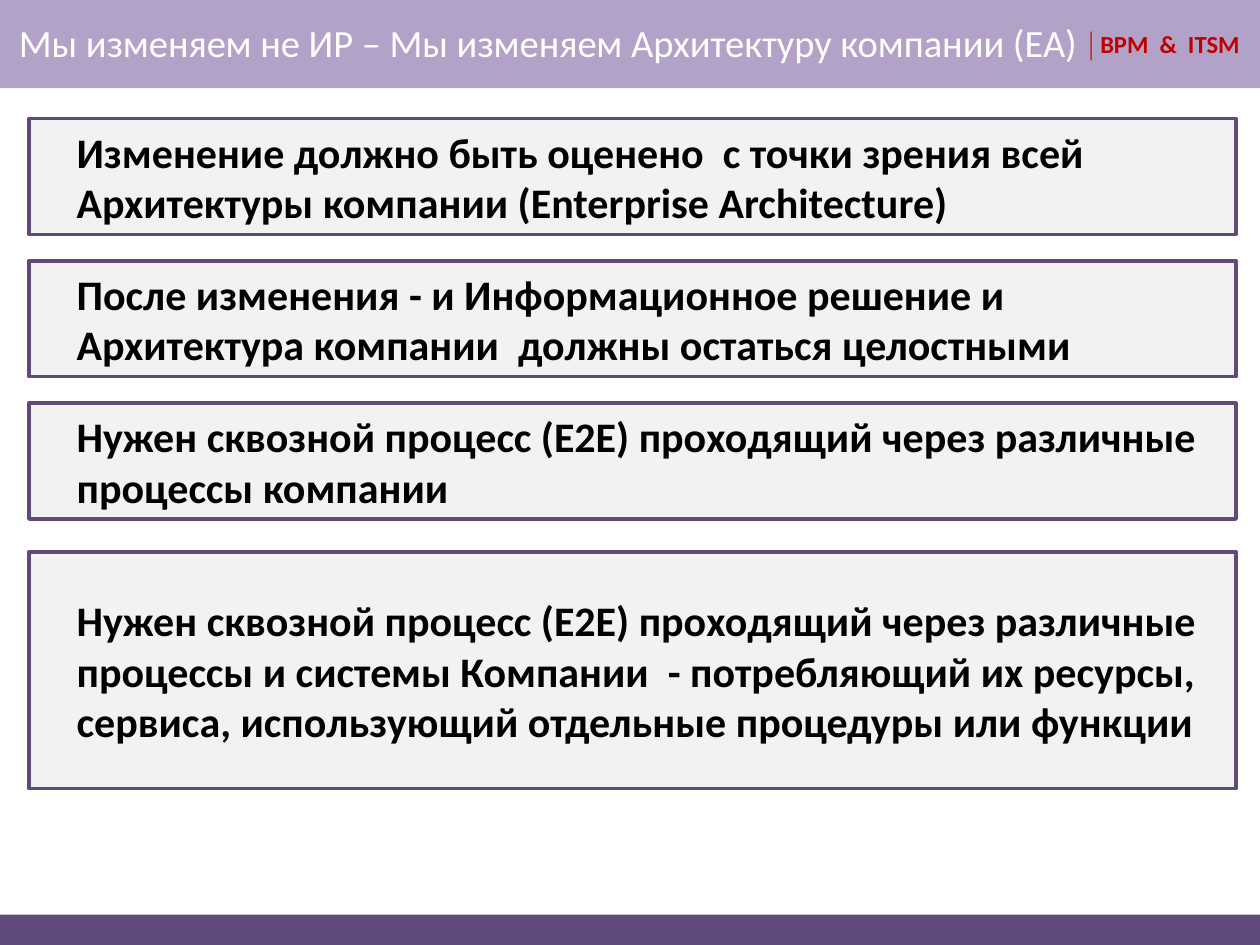
from lxml import etree
from pptx import Presentation
from pptx.dml.color import RGBColor
from pptx.enum.shapes import MSO_CONNECTOR, MSO_SHAPE
from pptx.enum.text import MSO_ANCHOR, MSO_AUTO_SIZE, PP_ALIGN
from pptx.oxml.ns import qn
from pptx.util import Pt

RECT = MSO_SHAPE.RECTANGLE
STRAIGHT = MSO_CONNECTOR.STRAIGHT
MIDDLE = MSO_ANCHOR.MIDDLE
FIXED = MSO_AUTO_SIZE.NONE
LEFT = PP_ALIGN.LEFT
RIGHT = PP_ALIGN.RIGHT

WIDTH = 720
HEIGHT = 540
HEAD = 50.4
FOOT = 17.28
LILAC = "B3A2C7"
PLUM = "604A7B"
GREY = "F2F2F2"
RED = "C00000"

PANELS = [
    (67.68, 66.24, "Изменение должно быть оценено  с точки зрения всей "
     "Архитектуры компании (Enterprise Architecture)"),
    (149.04, 66.24, "После изменения - и Информационное решение и "
     "Архитектура компании  должны остаться целостными"),
    (230.4, 66.24, "Нужен сквозной процесс (E2E) проходящий через "
     "различные процессы компании"),
    (315.36, 135.36, "Нужен сквозной процесс (E2E) проходящий через "
     "различные процессы и системы Компании  - потребляющий их ресурсы, "
     "сервиса, использующий отдельные процедуры или функции"),
]


def paint(color, tone):
    color.rgb = RGBColor.from_string(tone)


def write(shape, text, size=24, tone="000000", bold=False, align=LEFT,
          inset=(7.2, 3.6, 7.2, 3.6), indent=0, spacing=None):
    frame = shape.text_frame
    frame.word_wrap = True
    frame.auto_size = FIXED
    frame.vertical_anchor = MIDDLE
    (frame.margin_left, frame.margin_top,
     frame.margin_right, frame.margin_bottom) = map(Pt, inset)
    para = frame.paragraphs[0]
    para.alignment = align
    para.line_spacing = spacing
    if indent:
        props = para._p.get_or_add_pPr()
        props.set("marL", str(Pt(indent)))
        props.set("indent", "0")
    run = para.add_run()
    run.text = text
    run.font.name = "Calibri"
    run.font.size = Pt(size)
    run.font.bold = bold
    paint(run.font.color, tone)


def add_box(slide, left, top, width, height, fill, edge=None):
    box = slide.shapes.add_shape(RECT, Pt(left), Pt(top), Pt(width), Pt(height))
    box.shadow.inherit = False
    box.fill.solid()
    paint(box.fill.fore_color, fill)
    if edge:
        paint(box.line.color, edge)
        box.line.width = Pt(2)
    else:
        box.line.fill.background()
    return box


def add_rule(slide, left, top, end):
    rule = slide.shapes.add_connector(STRAIGHT, Pt(left), Pt(top), Pt(left), Pt(end))
    paint(rule.line.color, RED)
    rule.line.width = Pt(0.75)
    props = rule.element.spPr
    tone = next(props.iter(qn("a:srgbClr")))
    etree.SubElement(tone, qn("a:alpha")).set("val", "70000")
    etree.SubElement(props, qn("a:effectLst"))


def add_title(slide, text):
    title = slide.shapes.title
    title.left, title.top = Pt(-7.2), Pt(0)
    title.width, title.height = Pt(635.76), Pt(HEAD)
    write(title, text, size=22, tone="FFFFFF", inset=(18, 4.32, 5.76, 0),
          spacing=0.7)
    title.element.getparent().append(title.element)


def main():
    deck = Presentation()
    deck.slide_width, deck.slide_height = Pt(WIDTH), Pt(HEIGHT)
    slide = deck.slides.add_slide(deck.slide_layouts[5])
    head = add_box(slide, 0, 0, WIDTH, HEAD, LILAC)
    write(head, "BPM  &  ITSM", size=14, tone=RED, bold=True, align=RIGHT,
          inset=(11.52, 5.76, 11.52, 5.76))
    add_rule(slide, 623.52, 18, 34.56)
    add_box(slide, 0, HEIGHT - FOOT, WIDTH, FOOT, PLUM)
    for top, height, text in PANELS:
        panel = add_box(slide, 16.56, top, 689.76, height, GREY, PLUM)
        write(panel, text, bold=True, indent=20.16)
    add_title(slide, "Мы изменяем не ИР – Мы изменяем Архитектуру компании (EA)")
    deck.save("out.pptx")


if __name__ == "__main__":
    main()
